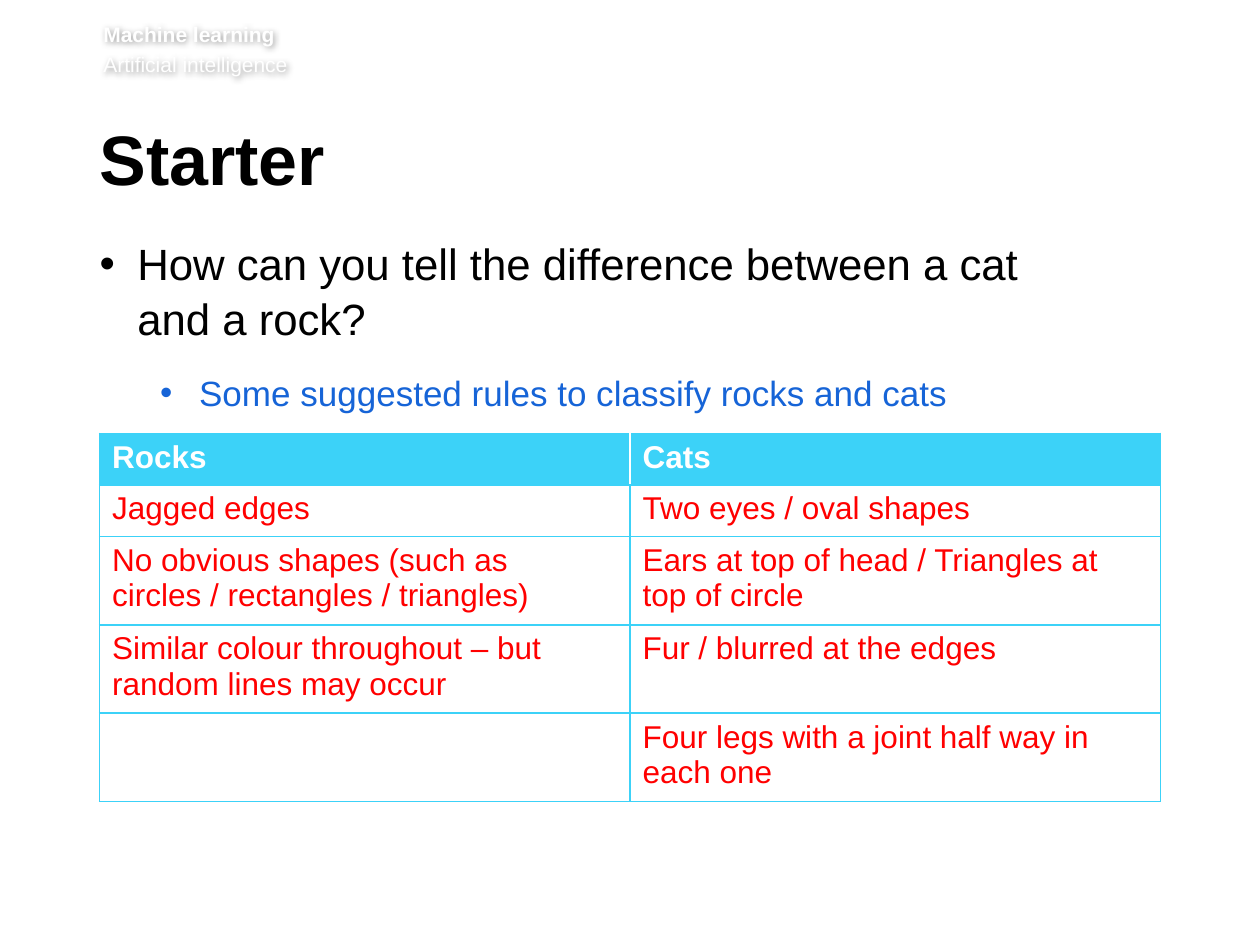
from lxml import etree
from pptx import Presentation
from pptx.dml.color import RGBColor
from pptx.enum.text import MSO_ANCHOR, PP_ALIGN
from pptx.oxml.ns import qn
from pptx.util import Inches, Pt

TOP = MSO_ANCHOR.TOP
LEFT = PP_ALIGN.LEFT
TITLE_ONLY = 5
FONT = "Arial"
WHITE = RGBColor(0xFF, 0xFF, 0xFF)
BLACK = RGBColor(0, 0, 0)
BLUE = RGBColor(0x16, 0x64, 0xD7)
CYAN = RGBColor(0x3C, 0xD2, 0xF8)
RED = RGBColor(0xFF, 0, 0)

RULES = [
    ("Rocks", "Cats"),
    ("Jagged edges", "Two eyes / oval shapes"),
    ("No obvious shapes (such as circles / rectangles / triangles)",
     "Ears at top of head / Triangles at top of circle"),
    ("Similar colour throughout – but random lines may occur", "Fur / blurred at the edges"),
    ("", "Four legs with a joint half way in each one"),
]


def add_element(parent, tag, **attributes):
    element = etree.SubElement(parent, qn(tag))
    for name, value in attributes.items():
        element.set(name, str(value))
    return element


def place(shape, left, top, width, height):
    shape.left, shape.top = Inches(left), Inches(top)
    shape.width, shape.height = Inches(width), Inches(height)


def set_frame(shape, left=0, top=0, right=0.1, bottom=0.05):
    frame = shape.text_frame
    frame.word_wrap = True
    frame.vertical_anchor = TOP
    frame.margin_left, frame.margin_top = Inches(left), Inches(top)
    frame.margin_right, frame.margin_bottom = Inches(right), Inches(bottom)
    return frame


def add_text_box(slide, left, top, width, height, **margins):
    shape = slide.shapes.add_textbox(Inches(left), Inches(top), Inches(width), Inches(height))
    set_frame(shape, **margins)
    return shape


def write(paragraph, text, size, color, bold=False, before=0, after=0, spacing=None):
    paragraph.text = text
    paragraph.alignment = LEFT
    paragraph.space_before, paragraph.space_after = Pt(before), Pt(after)
    if spacing:
        paragraph.line_spacing = spacing
    font = paragraph.font
    font.name, font.size, font.bold = FONT, Pt(size), bold
    font.color.rgb = color
    for run in paragraph.runs:
        run.font.name, run.font.size, run.font.bold = FONT, Pt(size), bold
        run.font.color.rgb = color


def set_bullet(paragraph, margin, hanging, level=0):
    paragraph.level = level
    properties = paragraph._p.get_or_add_pPr()
    properties.set("marL", str(Inches(margin)))
    properties.set("indent", str(-Inches(hanging)))
    add_element(properties, "a:buFont", typeface=FONT)
    add_element(properties, "a:buChar", char="•")


def add_shadow(shape):
    effects = add_element(shape._element.spPr, "a:effectLst")
    shadow = add_element(effects, "a:outerShdw", blurRad=Pt(4), dist=Pt(1), dir=2700000)
    color = add_element(shadow, "a:srgbClr", val=BLACK)
    add_element(color, "a:alpha", val=40000)


def set_borders(cell, **colors):
    properties = cell._tc.get_or_add_tcPr()
    for position, side in enumerate("LRTB"):
        line = etree.Element(qn(f"a:ln{side}"), w=str(Pt(1)))
        fill = add_element(line, "a:solidFill")
        add_element(fill, "a:srgbClr", val=colors.get(side, CYAN))
        properties.insert(position, line)


def add_header(slide):
    header = add_text_box(slide, 0.82, 0.17, 8.82, 0.49, right=0)
    add_shadow(header)
    frame = header.text_frame
    write(frame.paragraphs[0], "Machine learning", 12, WHITE, bold=True)
    write(frame.add_paragraph(), "Artificial intelligence", 12, WHITE, before=2.9)


def add_title(slide):
    title = slide.shapes.title
    place(title, 0.79, 0.99, 8.55, 0.73)
    frame = set_frame(title, top=0.05)
    write(frame.paragraphs[0], "Starter", 40, BLACK, bold=True, after=15, spacing=Pt(39))


def add_question(slide):
    frame = add_text_box(slide, 0.79, 1.86, 8.53, 3.78).text_frame
    question = frame.paragraphs[0]
    set_bullet(question, 0.3, 0.3)
    write(question, "How can you tell the difference between a cat \vand a rock?", 25, BLACK,
          after=14, spacing=1.05)
    answer = frame.add_paragraph()
    set_bullet(answer, 0.79, 0.31, level=1)
    write(answer, "Some suggested rules to classify rocks and cats", 20, BLUE,
          after=12, spacing=1.05)


def add_rules_table(slide):
    shape = slide.shapes.add_table(len(RULES), 2, Inches(0.79), Inches(3.44),
                                   Inches(8.42), Inches(0.41 * len(RULES)))
    table = shape.table
    table.horz_banding = False
    for row_index, row in enumerate(RULES):
        is_heading = row_index == 0
        for column_index, text in enumerate(row):
            cell = table.cell(row_index, column_index)
            write(cell.text_frame.paragraphs[0], text, 18,
                  WHITE if is_heading else RED, bold=is_heading)
            if is_heading:
                cell.fill.solid()
                cell.fill.fore_color.rgb = CYAN
                set_borders(cell, **{"RL"[column_index]: WHITE})
            else:
                cell.fill.background()
                set_borders(cell)


def main():
    presentation = Presentation()
    presentation.slide_width, presentation.slide_height = Inches(10), Inches(7.5)
    slide = presentation.slides.add_slide(presentation.slide_layouts[TITLE_ONLY])
    add_header(slide)
    add_title(slide)
    add_question(slide)
    add_rules_table(slide)
    presentation.save("out.pptx")


if __name__ == "__main__":
    main()
